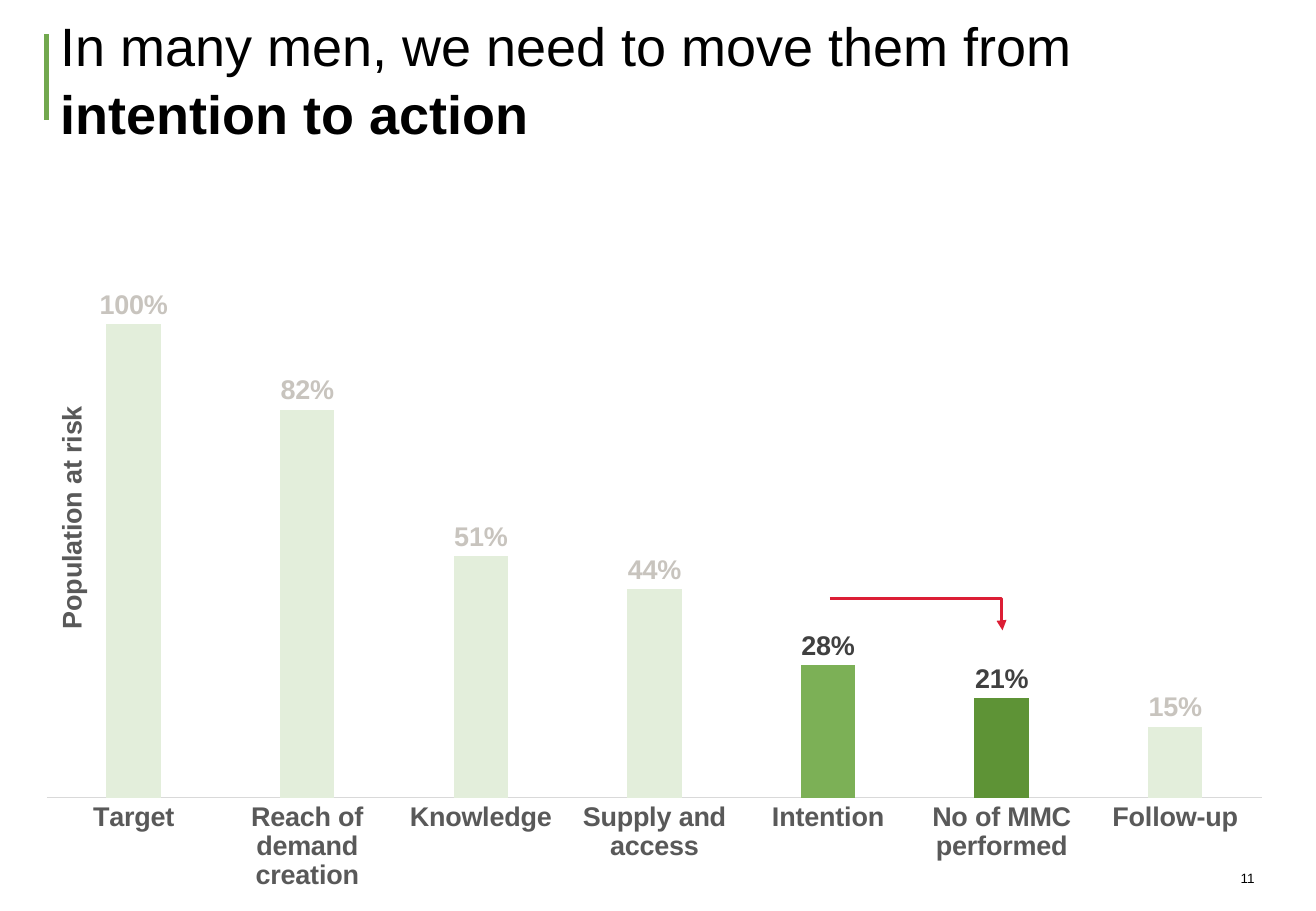
from pptx import Presentation, util as u
from pptx.chart import data
from pptx.dml import color
from pptx.enum import chart as ch, shapes, text
from pptx.oxml import parse_xml, ns

HEX = {"black": "000000", "rule": "72A84E", "pale": "E3EEDB", "mid": "7CB056",
       "deep": "5E9336", "faint": "C8C4BE", "dark": "404040", "gray": "595959",
       "axis": "D9D9D9", "red": "DC1E35"}


def rgb(name):
    return color.RGBColor.from_string(HEX[name])


def write(para, words, size=16, bold=False, tint="black"):
    run = para.add_run()
    run.text = words
    run.font.name = "Arial"
    run.font.size = u.Pt(size)
    run.font.bold = bold
    run.font.color.rgb = rgb(tint)


deck = Presentation()
deck.slide_width = u.Inches(10.83)
deck.slide_height = u.Inches(7.5)
slide = deck.slides.add_slide(deck.slide_layouts[5])

title = slide.shapes.title
title.left, title.top = u.Inches(0.4), u.Inches(0.29)
title.width, title.height = u.Inches(10.05), u.Inches(0.7)
frame = title.text_frame
frame.word_wrap = True
frame.auto_size = text.MSO_AUTO_SIZE.NONE
frame.vertical_anchor = text.MSO_ANCHOR.MIDDLE
head = frame.paragraphs[0]
head.alignment = text.PP_ALIGN.LEFT
head.line_spacing = 1.05
write(head, "In many men, we need to move them from ", size=32)
write(head, "intention to action", size=32, bold=True)

page = slide.shapes.add_textbox(u.Inches(10.21), u.Inches(7.17), u.Inches(0.58), u.Inches(0.13))
frame = page.text_frame
frame.margin_left = frame.margin_right = frame.margin_top = frame.margin_bottom = 0
frame.word_wrap = True
frame.vertical_anchor = text.MSO_ANCHOR.BOTTOM
write(frame.paragraphs[0], "11", size=8)

stages = [("Target", 1, "pale"), ("Reach of demand creation", 0.82, "pale"),
          ("Knowledge", 0.51, "pale"), ("Supply and access", 0.44, "pale"),
          ("Intention", 0.28, "mid"), ("No of MMC performed", 0.21, "deep"),
          ("Follow-up", 0.15, "pale")]
table = data.CategoryChartData(number_format="0%")
table.categories = [stage[0] for stage in stages]
table.add_series("Series 1", [stage[1] for stage in stages])
chart = slide.shapes.add_chart(
    ch.XL_CHART_TYPE.COLUMN_CLUSTERED, u.Inches(0.02), u.Inches(1.66),
    u.Inches(10.45), u.Inches(6.09), table).chart
chart.has_legend = False
chart.has_title = False
chart.font.name = "Arial"
chart.font.size = u.Pt(16)
chart.font.color.rgb = rgb("black")

base = chart.category_axis
base.major_tick_mark = ch.XL_TICK_MARK.NONE
base.format.line.color.rgb = rgb("axis")
base.format.line.width = u.Pt(0.75)
base.tick_labels.font.name = "Arial"
base.tick_labels.font.size = u.Pt(16)
base.tick_labels.font.bold = True
base.tick_labels.font.color.rgb = rgb("gray")

scale = chart.value_axis
scale.minimum_scale, scale.maximum_scale, scale.major_unit = 0, 1.2, 0.2
scale.has_major_gridlines = False
scale.visible = False
scale.has_title = True
name = scale.axis_title
write(name.text_frame.paragraphs[0], "Population at risk", bold=True, tint="gray")
body = name.text_frame._txBody.bodyPr
body.set("rot", "-5400000")
body.set("vert", "horz")

plot = chart.plots[0]
plot.gap_width = 219
plot.overlap = -27
plot.vary_by_categories = False
plot.has_data_labels = True
marks = plot.series[0].data_labels
marks.show_value = True
marks.number_format = "0%"
marks.number_format_is_linked = False
marks.position = ch.XL_LABEL_POSITION.OUTSIDE_END
marks.font.name = "Arial"
marks.font.size = u.Pt(16)
marks.font.bold = True
marks.font.color.rgb = rgb("dark")
for place, (stage, share, tint) in enumerate(stages):
    point = plot.series[0].points[place]
    point.format.fill.solid()
    point.format.fill.fore_color.rgb = rgb(tint)
    if tint == "pale":
        label = point.data_label
        label.font.name = "Arial"
        label.font.size = u.Pt(16)
        label.font.bold = True
        label.font.color.rgb = rgb("faint")
        label.position = ch.XL_LABEL_POSITION.OUTSIDE_END

area = chart._chartSpace.chart.plotArea
spots = [(area, 0, {"layoutTarget": "inner", "xMode": "edge", "yMode": "edge",
                    "x": 0.035, "y": 0.038, "w": 0.957, "h": 0.768}),
         (name._element, 1, {"xMode": "edge", "yMode": "edge", "x": 0.037, "y": 0.27})]
for owner, order, parts in spots:
    for old in owner.findall(ns.qn("c:layout")):
        owner.remove(old)
    inner = "".join(f'<c:{key} val="{val}"/>' for key, val in parts.items())
    owner.insert(order, parse_xml(
        f'<c:layout {ns.nsdecls("c")}><c:manualLayout>{inner}</c:manualLayout></c:layout>'))

kinds = shapes.MSO_CONNECTOR
for kind, x1, y1, x2, y2, tint, width in [
        (kinds.STRAIGHT, 0.38, 0.28, 0.38, 0.99, "rule", 3),
        (kinds.ELBOW, 6.83, 4.93, 8.25, 5.19, "red", 1.75)]:
    line = slide.shapes.add_connector(kind, u.Inches(x1), u.Inches(y1), u.Inches(x2), u.Inches(y2))
    line.line.color.rgb = rgb(tint)
    line.line.width = u.Pt(width)
    props = line._element.spPr
    props.append(parse_xml(f'<a:effectLst {ns.nsdecls("a")}/>'))
    if kind == kinds.ELBOW:
        line.line._get_or_add_ln().append(
            parse_xml(f'<a:tailEnd {ns.nsdecls("a")} type="triangle"/>'))
        props.prstGeom.get_or_add_avLst().append(
            parse_xml(f'<a:gd {ns.nsdecls("a")} name="adj1" fmla="val 99500"/>'))

deck.save("out.pptx")
